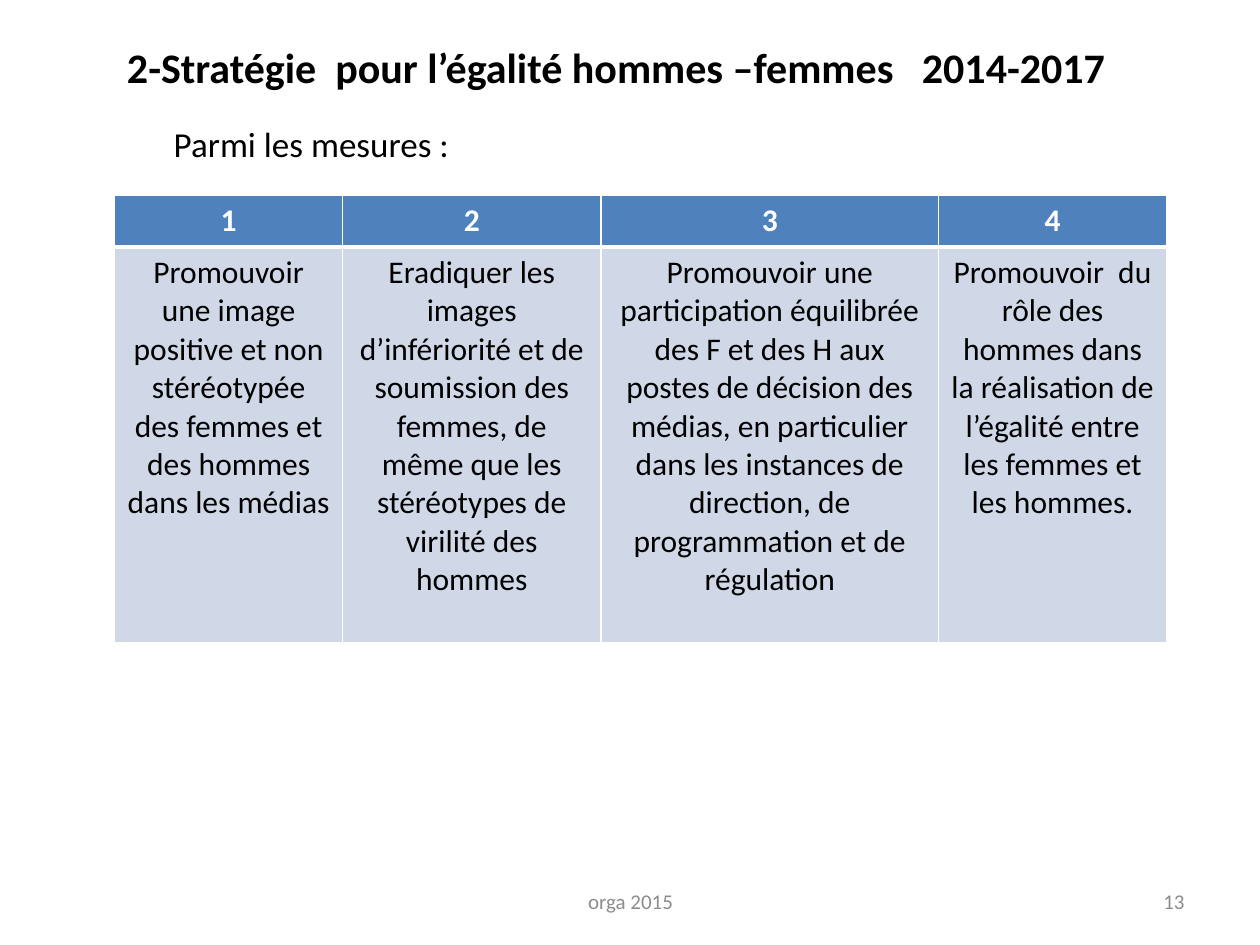
from lxml.etree import SubElement
from pptx import Presentation
from pptx.dml.color import RGBColor
from pptx.enum.text import MSO_ANCHOR as Anchor, PP_ALIGN as Align
from pptx.oxml.ns import qn
from pptx.util import Inches, Pt

BLACK, WHITE, GREY = "000000", "FFFFFF", "8C8C8C"
BLUE, PALE = "4F81BD", "D0D8E8"

COLS = [1.81, 2.05, 2.68, 1.81]
ROWS = [0.41, 3.14]
CELLS = [
    ["1", "2", "3", "4"],
    [
        "Promouvoir une image positive et non stéréotypée des femmes et des hommes dans les médias",
        "Eradiquer les images d’infériorité et de soumission des femmes, de même que les "
        "stéréotypes de virilité des hommes",
        "Promouvoir une participation équilibrée des F et des H aux postes de décision des médias, "
        "en particulier dans les instances de direction, de programmation et de régulation",
        "Promouvoir  du rôle des hommes dans la réalisation de l’égalité entre les femmes et les hommes.",
    ],
]
# fill, text format, text colour and bottom border width of each row
LOOKS = [
    (BLUE, {"size": Pt(18), "bold": True}, WHITE, 3),
    (PALE, {"size": Pt(18), "bold": False}, BLACK, 1),
]


def tint(code):
    return RGBColor.from_string(code)


class Page:
    font = "Calibri"

    def __init__(self, slide):
        self.slide = slide

    def label(self, frame, words, color, form, align):
        """Put one styled run into a text frame."""
        para = frame.paragraphs[0]
        para.alignment = align
        run = para.add_run()
        run.text = words
        for key, value in {"name": self.font, **form}.items():
            setattr(run.font, key, value)
        run.font.color.rgb = tint(color)

    def text(self, words, box, size, color=BLACK, bold=False, align=Align.LEFT, anchor=Anchor.TOP):
        frame = self.slide.shapes.add_textbox(*map(Inches, box)).text_frame
        frame.word_wrap = True
        frame.vertical_anchor = anchor
        self.label(frame, words, color, {"size": Pt(size), "bold": bold}, align)

    def edge(self, cell, low):
        """Draw white borders, the bottom one with its own width."""
        props = cell._tc.get_or_add_tcPr()
        for side, width in (("L", 1), ("R", 1), ("T", 1), ("B", low)):
            line = SubElement(props, qn(f"a:ln{side}"), w=str(Pt(width)))
            SubElement(SubElement(line, qn("a:solidFill")), qn("a:srgbClr"), val=WHITE)

    def table(self, left, top):
        size = map(Inches, (left, top, sum(COLS), sum(ROWS)))
        grid = self.slide.shapes.add_table(len(ROWS), len(COLS), *size).table
        for col, width in zip(grid.columns, COLS):
            col.width = Inches(width)
        for row, height, words, look in zip(grid.rows, ROWS, CELLS, LOOKS):
            fill, form, color, low = look
            row.height = Inches(height)
            for cell, word in zip(row.cells, words):
                self.edge(cell, low)
                cell.fill.solid()
                cell.fill.fore_color.rgb = tint(fill)
                self.label(cell.text_frame, word, color, form, Align.CENTER)


def main():
    deck = Presentation()
    deck.slide_width, deck.slide_height = Inches(10), Inches(7.5)
    page = Page(deck.slides.add_slide(deck.slide_layouts[6]))
    page.table(0.91, 1.55)
    page.text("2-Stratégie  pour l’égalité hommes –femmes   2014-2017",
              (0.91, 0.28, 8.27, 0.5), 24, bold=True)
    page.text("Parmi les mesures :", (1.28, 0.92, 4.02, 0.44), 20)
    page.text("orga 2015", (3.42, 6.95, 3.17, 0.4), 12, GREY, align=Align.CENTER, anchor=Anchor.MIDDLE)
    page.text("13", (7.17, 6.95, 2.33, 0.4), 12, GREY, align=Align.RIGHT, anchor=Anchor.MIDDLE)
    deck.save("out.pptx")


if __name__ == "__main__":
    main()
